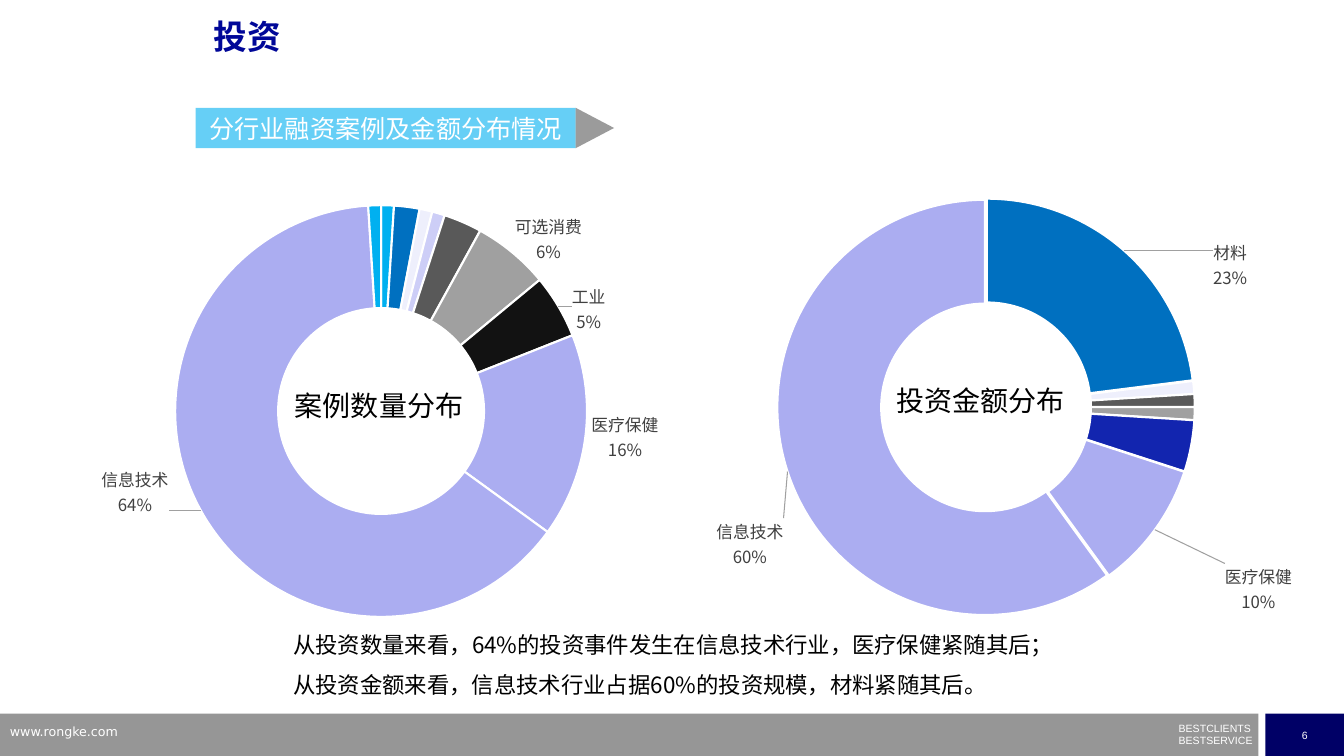
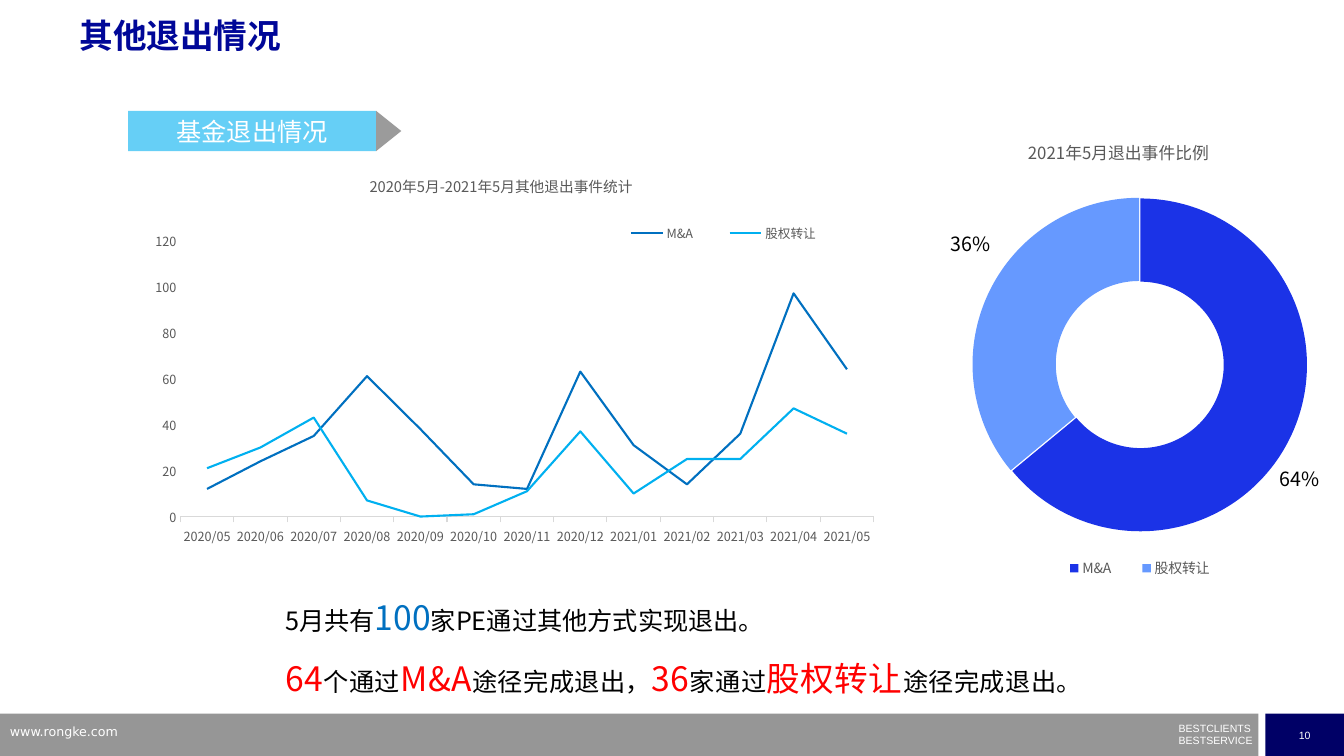
from math import cos, pi, sin

from lxml import etree
from pptx import Presentation
from pptx.chart.data import CategoryChartData
from pptx.dml.color import RGBColor
from pptx.enum.chart import XL_CHART_TYPE, XL_LEGEND_POSITION, XL_TICK_MARK
from pptx.enum.shapes import MSO_SHAPE
from pptx.enum.text import MSO_ANCHOR, PP_ALIGN
from pptx.oxml import parse_xml
from pptx.oxml.ns import nsdecls, qn
from pptx.util import Inches, Pt

HEX = {
    "white": "FFFFFF", "black": "000000", "navy": "000066", "title": "000798",
    "bar": "969696", "sky": "00B0F0", "blue": "0070C0", "red": "FF0000",
    "pale": "EEEFFC", "lilac": "CDCEF7", "mauve": "ABADF1", "dark": "595959",
    "grey": "A0A0A0", "coal": "121212", "ink": "1225AF", "royal": "1B33E7",
    "soft": "6699FF", "label": "404040", "rule": "D9D9D9",
}
RGB = {name: RGBColor.from_string(value) for name, value in HEX.items()}
SANS = "Noto Sans CJK SC"
ROUND = "Noto Sans CJK JP"


def write(shape, paras, size, hue="black", face=SANS, align=PP_ALIGN.LEFT,
          anchor=MSO_ANCHOR.TOP, inset=0.1, gap=None, bold=False):
    """Fill a shape with paragraphs, each a list of (text, size, hue) or a string."""
    frame = shape.text_frame
    frame.word_wrap = True
    frame.vertical_anchor = anchor
    frame.margin_left = frame.margin_right = Inches(inset)
    frame.margin_top = frame.margin_bottom = Inches(inset / 2)
    for i, parts in enumerate(paras):
        para = frame.add_paragraph() if i else frame.paragraphs[0]
        para.alignment = align
        para.line_spacing = gap
        if isinstance(parts, str):
            parts = [(parts, size, hue)]
        for text, points, tint in parts:
            run = para.add_run()
            run.text = text
            run.font.size = Pt(points)
            run.font.name = face
            run.font.bold = bold
            run.font.color.rgb = RGB[tint]


def place(parent, index, x, y, w=None, h=None, edge=True):
    """Give a chart part a manual layout, in fractions of the chart."""
    for old in parent.findall(qn("c:layout")):
        parent.remove(old)
    layout = etree.Element(qn("c:layout"))
    manual = etree.SubElement(layout, qn("c:manualLayout"))
    values = {"x": x, "y": y, "w": w, "h": h}
    if edge:
        inner = {"layoutTarget": "inner"} if index == 0 else {}
        values = {**inner, "xMode": "edge", "yMode": "edge", **values}
    for tag, value in values.items():
        if value is not None:
            etree.SubElement(manual, qn("c:" + tag), val=str(value))
    parent.insert(index, layout)


deck = Presentation()
deck.slide_width = Inches(13.33)
deck.slide_height = Inches(7.5)

# Shared page parts: footer, title and arrow banner
pages = [
    ("6", "投资", (2.02, 0.15), "分行业融资案例及金额分布情况", (1.94, 1.07, 3.77), 0.38),
    ("10", "其他退出情况", (0.69, 0.14), "基金退出情况", (1.27, 1.1, 2.46), 0.25),
]
for number, title, (x, y), banner, (left, top, width), tip in pages:
    slide = deck.slides.add_slide(deck.slide_layouts[6])
    high = 0.4
    blocks = [
        (MSO_SHAPE.RECTANGLE, 0, 7.08, 12.48, 0.42, "bar", None),
        (MSO_SHAPE.RECTANGLE, 12.55, 7.08, 0.78, 0.42, "navy", (number, 7.5, "Arial")),
        (MSO_SHAPE.RECTANGLE, left, top, width, high, "sky", (banner, 18, SANS)),
        (MSO_SHAPE.ISOSCELES_TRIANGLE, left + width + (tip - high) / 2,
         top + (high - tip) / 2, high, tip, "dark", None),
    ]
    for kind, bx, by, bw, bh, hue, label in blocks:
        block = slide.shapes.add_shape(kind, Inches(bx), Inches(by), Inches(bw), Inches(bh))
        block.shadow.inherit = False
        block.fill.solid()
        block.fill.fore_color.rgb = RGB[hue]
        block.line.fill.background()
        if hue in ("sky", "dark"):
            for tint in block._element.spPr.iter(qn("a:srgbClr")):
                etree.SubElement(tint, qn("a:alpha"), val="60000")
        if kind == MSO_SHAPE.ISOSCELES_TRIANGLE:
            block.rotation = 90
        if label:
            text, size, face = label
            write(block, [text], size, "white", face, PP_ALIGN.CENTER,
                  MSO_ANCHOR.MIDDLE, inset=0)
    motto = slide.shapes.add_textbox(Inches(11.69), Inches(7.16), Inches(0.76), Inches(0.24))
    write(motto, ["BESTCLIENTS", "BESTSERVICE"], 7.5, "white", "Arial", inset=0)
    site = slide.shapes.add_textbox(Inches(0), Inches(7.13), Inches(3.2), Inches(0.26))
    write(site, ["www.rongke.com"], 9, "white", "DejaVu Sans")
    head = slide.shapes.add_textbox(Inches(x), Inches(y), Inches(9), Inches(0.7))
    write(head, [title], 24, "title", "Arial", gap=0.9, bold=True)

invest, exits = deck.slides

# Doughnuts; labels map a point to the centre of its label in inches
fields = ["公用事业", "材料", "日常消费", "房地产", "金融",
          "可选消费", "工业", "医疗保健", "信息技术", "电信服务"]
hues = ["sky", "blue", "pale", "lilac", "dark", "grey", "coal", "mauve", "mauve", "sky"]
ways = ["M&A", "股权转让"]
rings = [
    dict(slide=invest, box=(6.3, -0.31, 8.81, 8.13), plot=(0.16, 0.25, 0.47, 0.57),
         cats=fields, hues=hues[:6] + ["ink"] + hues[7:], hole=50, burst=1,
         vals=[0, 23, 1, 0, 1, 1, 4, 10, 60, 0],
         labels={1: (12.2, 2.63), 7: (12.48, 5.84), 8: (7.44, 5.39)}, size=12),
    dict(slide=invest, box=(0, 0, 8.69, 8.41), plot=(0.2, 0.2, 0.47, 0.57),
         cats=fields, hues=hues, hole=52, burst=0,
         vals=[1, 2, 1, 1, 3, 6, 5, 16, 64, 1],
         labels={5: (5.44, 2.37), 6: (5.84, 3.06), 7: (6.2, 4.33), 8: (1.34, 4.88)},
         size=12),
    dict(slide=exits, box=(7.63, 1.14, 7.35, 4.81), plot=(0.27, 0.17, 0.46, 0.69),
         cats=ways, hues=["royal", "soft"], hole=50, burst=1, vals=[64, 36],
         labels={0: (12.89, 4.74), 1: (9.63, 2.41)}, size=14),
]
charts = []
for ring in rings:
    left, top, wide, high = ring["box"]
    px, py, pw, ph = ring["plot"]
    vals, named = ring["vals"], ring["cats"] is fields
    data = CategoryChartData()
    data.categories = ring["cats"]
    data.add_series("Series 1", vals)
    chart = ring["slide"].shapes.add_chart(
        XL_CHART_TYPE.DOUGHNUT, *map(Inches, ring["box"]), data).chart
    charts.append(chart)
    chart.has_legend = chart.has_title = False
    chart.font.size = Pt(10)
    chart.font.name = SANS
    place(chart._chartSpace.chart.plotArea, 0, *ring["plot"])
    for hole in chart._chartSpace.iter(qn("c:holeSize")):
        hole.set("val", str(ring["hole"]))
    series = chart.plots[0].series[0]
    cat = series._element.find(qn("c:cat"))
    if ring["burst"]:
        burst = etree.Element(qn("c:explosion"), val=str(ring["burst"]))
        cat.addprevious(burst)
    for i, hue in enumerate(ring["hues"]):
        look = series.points[i].format
        look.fill.solid()
        look.fill.fore_color.rgb = RGB[hue]
        if named:
            look.line.color.rgb = RGB["white"]
            look.line.width = Pt(1.5)
        else:
            look.line.fill.background()

    hue = HEX["label" if named else "black"]
    style = (f'<c:spPr><a:noFill/><a:ln><a:noFill/></a:ln></c:spPr><c:txPr><a:bodyPr/><a:p><a:pPr>'
             f'<a:defRPr sz="{ring["size"] * 100}"><a:solidFill><a:srgbClr val="{hue}"/></a:solidFill>'
             f'<a:latin typeface="{SANS}"/></a:defRPr></a:pPr><a:endParaRPr lang="zh-CN"/></a:p></c:txPr>')
    shows = ('<c:showLegendKey val="0"/><c:showVal val="0"/><c:showCatName val="{0}"/>'
             '<c:showSerName val="0"/><c:showPercent val="{1}"/><c:showBubbleSize val="0"/>'
             '<c:separator>\n</c:separator>')
    each = "".join(f'<c:dLbl><c:idx val="{i}"/>{style}{shows.format(int(named), 1)}</c:dLbl>'
                   for i in ring["labels"])
    leader = ('<c:leaderLines><c:spPr><a:ln w="9525"><a:solidFill>'
              f'<a:srgbClr val="{HEX["grey"]}"/></a:solidFill></a:ln></c:spPr></c:leaderLines>')
    labels = parse_xml(
        f'<c:dLbls {nsdecls("c", "a")}>{each}{style}{shows.format(0, 0)}'
        f'<c:showLeaderLines val="{int(named)}"/>{leader if named else ""}</c:dLbls>')
    cat.addprevious(labels)
    # Offsets count from the middle of each ring segment
    reach = 0.75 * min(pw * wide, ph * high) / 2
    for node, (i, (x, y)) in zip(labels.findall(qn("c:dLbl")), ring["labels"].items()):
        turn = 2 * pi * (sum(vals[:i]) + vals[i] / 2) / sum(vals)
        midx = left + (px + pw / 2) * wide + reach * sin(turn)
        midy = top + (py + ph / 2) * high - reach * cos(turn)
        place(node, 1, round((x - midx) / wide, 4), round((y - midy) / high, 4), edge=False)

for text, left, top, width in (("投资金额分布", 8.69, 3.62, 2.07), ("案例数量分布", 2.64, 3.67, 2.24)):
    core = invest.shapes.add_textbox(Inches(left), Inches(top), Inches(width), Inches(0.7))
    write(core, [text], 20, face=ROUND, align=PP_ALIGN.CENTER, anchor=MSO_ANCHOR.MIDDLE)

# Line chart of exits by month
months = [f"{2020 + m // 12}/{m % 12 + 1:02}" for m in range(4, 17)]
trend = CategoryChartData()
trend.categories = months
trend.add_series(ways[0], [12, 24, 35, 61, 38, 14, 12, 63, 31, 14, 36, 97, 64])
trend.add_series(ways[1], [21, 30, 43, 7, 0, 1, 11, 37, 10, 25, 25, 47, 36])
line = exits.shapes.add_chart(XL_CHART_TYPE.LINE, Inches(1.37), Inches(1.55),
                              Inches(7.49), Inches(4.35), trend).chart
charts.append(line)
line.font.size = Pt(9)
line.font.name = SANS
place(line._chartSpace.chart.plotArea, 0, 0.056, 0.192, 0.918, 0.63)
for series, hue in zip(line.plots[0].series, ("blue", "sky")):
    series.smooth = False
    series.format.line.color.rgb = RGB[hue]
    series.format.line.width = Pt(1.5)
for axis in (line.category_axis, line.value_axis):
    axis.has_major_gridlines = False
    axis.major_tick_mark = axis.minor_tick_mark = XL_TICK_MARK.NONE
    axis.tick_labels.font.size = Pt(9)
    axis.tick_labels.font.name = SANS
    axis.tick_labels.font.color.rgb = RGB["dark"]
line.category_axis.major_tick_mark = XL_TICK_MARK.OUTSIDE
line.category_axis.format.line.color.rgb = RGB["rule"]
line.category_axis.format.line.width = Pt(0.75)
line.value_axis.format.line.fill.background()
line.value_axis.minimum_scale = 0
line.value_axis.maximum_scale = 120
line.value_axis.major_unit = 20

# Titles and legends of the two exit charts
for chart, text, size, spot, small, side, key in (
        (charts[2], "2021年5月退出事件比例", 12, (0.345, 0.04), 10,
         XL_LEGEND_POSITION.BOTTOM, (0.37, 0.9, 0.26, 0.07)),
        (line, "2020年5月-2021年5月其他退出事件统计", 10.5, (0.303, 0.034), 9,
         XL_LEGEND_POSITION.TOP, (0.61, 0.14, 0.33, 0.07))):
    chart.has_title = True
    para = chart.chart_title.text_frame.paragraphs[0]
    para.text = text
    font = para.runs[0].font
    font.size = Pt(size)
    font.bold = False
    chart.has_legend = True
    chart.legend.position = side
    chart.legend.include_in_layout = chart is line
    chart.legend.font.size = Pt(small)
    for part in (font, chart.legend.font):
        part.name = SANS
        part.color.rgb = RGB["dark"]
    place(chart.chart_title._element, 1, *spot)
    place(chart.legend._element, 1, *key)

# Closing remarks
note = invest.shapes.add_textbox(Inches(2.91), Inches(6.13), Inches(9.73), Inches(0.8))
write(note, ["从投资数量来看，64%的投资事件发生在信息技术行业，医疗保健紧随其后；",
             "从投资金额来看，信息技术行业占据60%的投资规模，材料紧随其后。"],
      16, align=PP_ALIGN.JUSTIFY, inset=0, gap=Pt(28.5))
note = exits.shapes.add_textbox(Inches(2.83), Inches(5.72), Inches(8.5), Inches(1.2))
write(note, [
    [("5月共有", 18, "black"), ("100", 24, "blue"), ("家PE通过其他方式实现退出。", 18, "black")],
    [("64", 24, "red"), ("个通过", 18, "black"), ("M&A", 24, "red"),
     ("途径完成退出，", 18, "black"), ("36", 24, "red"), ("家通过", 18, "black"),
     ("股权转让", 24, "red"), ("途径完成退出。", 18, "black")],
], 18, align=PP_ALIGN.JUSTIFY, inset=0, gap=Pt(43.5))
for run in note.text_frame.paragraphs[1].runs:
    run._r.get_or_add_rPr().set("spc", "30")

# Clear chart backgrounds and set the East Asian face beside each Latin one
for chart in charts:
    chart._chartSpace.chart.addnext(parse_xml(
        f'<c:spPr {nsdecls("c", "a")}><a:noFill/><a:ln><a:noFill/></a:ln></c:spPr>'))
for root in [s.element for s in deck.slides] + [c._chartSpace for c in charts]:
    for latin in list(root.iter(qn("a:latin"))):
        face = latin.get("typeface")
        east = face if face.startswith("Noto") else SANS
        latin.addnext(etree.Element(qn("a:ea"), typeface=east))

deck.save("out.pptx")
